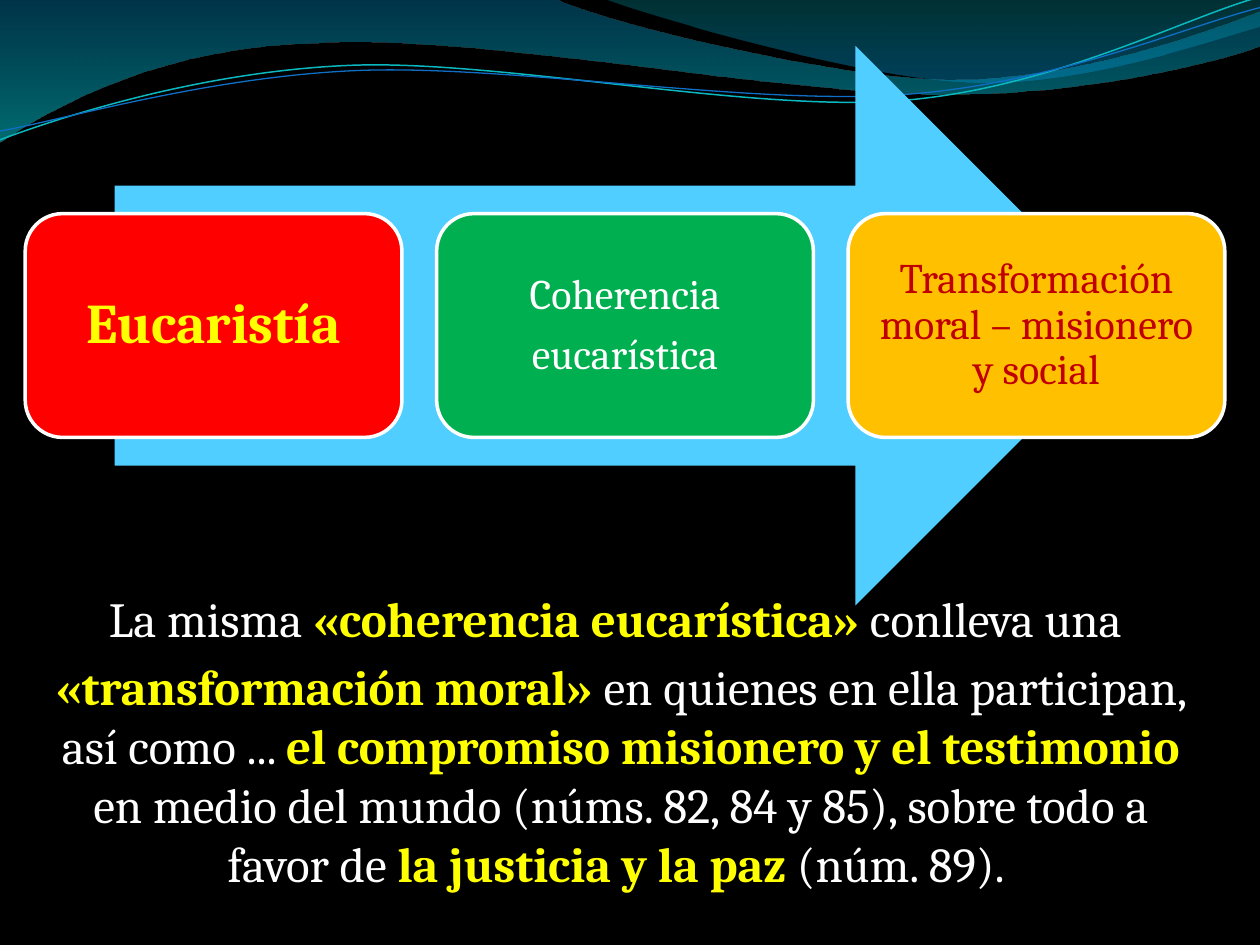
from dataclasses import dataclass
from typing import Optional

from lxml import etree
from pptx import Presentation
from pptx import util as u
from pptx.dml.color import RGBColor
from pptx.enum import shapes, text
from pptx.oxml import ns

FONT = "Cambria"
BLACK = RGBColor(0x00, 0x00, 0x00)
WHITE = RGBColor(0xFF, 0xFF, 0xFF)
YELLOW = RGBColor(0xFF, 0xFF, 0x00)
RED = RGBColor(0xFF, 0x00, 0x00)
GREEN = RGBColor(0x00, 0xB0, 0x50)
AMBER = RGBColor(0xFF, 0xC0, 0x00)
DARK_RED = RGBColor(0xC0, 0x00, 0x00)
SKY = RGBColor(0x4F, 0xCE, 0xFF)
DEEP_BLUE = RGBColor(0x00, 0x74, 0xA1)
TURQUOISE = RGBColor(0x00, 0xC6, 0xCF)
TEAL = RGBColor(0x00, 0xA1, 0xA9)
OCEAN = RGBColor(0x00, 0x8B, 0xBF)
CYAN_LINE = RGBColor(0x0A, 0xB8, 0xBF)
BLUE_LINE = RGBColor(0x0F, 0x6F, 0xC6)


@dataclass
class Stop:
    position: float
    color: RGBColor
    opacity: int


@dataclass
class Wave:
    start: tuple
    segments: list  # two numbers: straight line; six: cubic curve
    stops: tuple = ()
    line: Optional[RGBColor] = None
    weight: float = 0


@dataclass
class Step:
    paragraphs: list
    fill: RGBColor
    color: RGBColor
    size: float = 24
    bold: bool = False
    margin: float = 7.2


WAVES = [
    Wave((0, 0), [
        (316.8, -0.7),
        (342.7, 12.2, 478.1, 45.4, 545.8, 45.4),
        (614.2, 45.4, 689.8, 18.7, 720, 6.5),
        (720.7, 25.9),
        (707.8, 31.7, 626.4, 54.7, 537.1, 54),
        (447.8, 54, 275, 20.2, 185, 24.5),
        (92.9, 25.9, 33.1, 59.8, -0.7, 81.4),
    ], stops=(Stop(0, DEEP_BLUE, 45), Stop(1, TURQUOISE, 55))),
    Wave((344.9, -0.7), [
        (366.5, 7.9, 491, 44.6, 553.7, 46.8),
        (616.3, 49.7, 691.9, 23, 720, 15.1),
        (720, 0),
    ], stops=(Stop(0, TEAL, 30), Stop(0.8, OCEAN, 45))),
    Wave((0, 79.9), [
        (34.6, 67, 113.8, 41, 199.4, 37.4),
        (284.4, 33.8, 427, 64.1, 513.4, 57.6),
        (599.8, 51.1, 675.4, 10.8, 718.6, -1.4),
    ], line=CYAN_LINE, weight=0.85),
    Wave((0, 74.9), [
        (33.8, 69.1, 118.1, 43.9, 203.8, 40.3),
        (290.2, 36.7, 429.8, 60.5, 516.2, 54),
        (601.9, 48.2, 677.5, 15.1, 720, 4.3),
    ], line=BLUE_LINE, weight=0.75),
]

STEPS = [
    Step(["Eucaristía"], RED, YELLOW, size=32, bold=True, margin=9.4),
    Step(["Coherencia", "eucarística"], GREEN, WHITE),
    Step(["Transformación moral – misionero y social"], AMBER, DARK_RED),
]

# Each run is its text and whether it is highlighted
MESSAGE = [
    [("La misma ", False), ("«coherencia eucarística» ", True), ("conlleva una ", False)],
    [("«transformación moral» ", True),
     ("en quienes en ella participan, así como ... ", False),
     ("el compromiso misionero y el testimonio ", True),
     ("en medio del mundo (núms. 82, 84 y 85), sobre todo a favor de ", False),
     ("la justicia y la paz ", True), ("(núm. 89). ", False)],
]


def add_run(paragraph, content: str, *, size: float, color: RGBColor, bold: bool = False):
    run = paragraph.add_run()
    run.text = content
    run.font.name = FONT
    run.font.size = u.Pt(size)
    run.font.bold = bold
    run.font.color.rgb = color


def next_paragraph(frame, index: int):
    paragraph = frame.add_paragraph() if index else frame.paragraphs[0]
    paragraph.alignment = text.PP_ALIGN.CENTER
    return paragraph


def set_frame(frame, margins: tuple, anchor) -> None:
    frame.word_wrap = True
    frame.auto_size = text.MSO_AUTO_SIZE.NONE
    frame.vertical_anchor = anchor
    frame.margin_left, frame.margin_top, frame.margin_right, frame.margin_bottom = map(u.Pt, margins)


def bend_segments(shape, segments: list) -> None:
    """Join the three lines of each six-number segment into one cubic curve."""
    lines = iter(list(shape.element.iter(ns.qn("a:lnTo"))))
    for segment in segments:
        line = next(lines)
        if len(segment) == 2:
            continue
        curve = etree.Element(ns.qn("a:cubicBezTo"))
        line.addprevious(curve)
        for control in (line, next(lines), next(lines)):
            curve.append(control[0])
            control.getparent().remove(control)


def draw_wave(slide, wave: Wave) -> None:
    points = [(u.Pt(segment[i]), u.Pt(segment[i + 1]))
              for segment in wave.segments for i in range(0, len(segment), 2)]
    builder = slide.shapes.build_freeform(*map(u.Pt, wave.start))
    builder.add_line_segments(points, close=bool(wave.stops))
    shape = builder.convert_to_shape()
    bend_segments(shape, wave.segments)
    shape.shadow.inherit = False
    if not wave.stops:
        shape.fill.background()
        shape.line.color.rgb = wave.line
        shape.line.width = u.Pt(wave.weight)
        return
    shape.line.fill.background()
    shape.fill.gradient()
    shape.fill.gradient_angle = 270
    for target, stop in zip(shape.fill.gradient_stops, wave.stops):
        target.position = stop.position
        target.color.rgb = stop.color
    colors = shape.element.spPr.iter(ns.qn("a:srgbClr"))
    for color, stop in zip(list(colors), wave.stops):
        etree.SubElement(color, ns.qn("a:alpha")).set("val", str(stop.opacity * 1000))


def add_block(slide, kind, bounds: tuple, fill: RGBColor):
    shape = slide.shapes.add_shape(kind, *map(u.Pt, bounds))
    shape.shadow.inherit = False
    shape.fill.solid()
    shape.fill.fore_color.rgb = fill
    shape.line.fill.background()
    return shape


def draw_step(slide, step: Step, left: float) -> None:
    shape = add_block(slide, shapes.MSO_SHAPE.ROUNDED_RECTANGLE,
                      (left, 122.1, 215.3, 127.9), step.fill)
    shape.line.color.rgb = WHITE
    shape.line.width = u.Pt(2)
    set_frame(shape.text_frame, (step.margin,) * 4, text.MSO_ANCHOR.MIDDLE)
    for index, content in enumerate(step.paragraphs):
        paragraph = next_paragraph(shape.text_frame, index)
        paragraph.line_spacing = 0.9
        paragraph.space_after = u.Pt(step.size * 0.35)
        add_run(paragraph, content, size=step.size, color=step.color, bold=step.bold)


def fill_message(placeholder) -> None:
    placeholder.left, placeholder.top = u.Pt(31), u.Pt(332.6)
    placeholder.width, placeholder.height = u.Pt(652.3), u.Pt(175.7)
    set_frame(placeholder.text_frame, (0, 3.6, 1.4, 3.6), text.MSO_ANCHOR.TOP)
    for index, runs in enumerate(MESSAGE):
        paragraph = next_paragraph(placeholder.text_frame, index)
        paragraph.space_before = u.Pt(5.6 if index else 0)
        # Right indent of the paragraph
        paragraph._p.get_or_add_pPr().set("marR", str(u.Pt(3.6)))
        for content, highlighted in runs:
            add_run(paragraph, content, size=28, bold=highlighted,
                    color=YELLOW if highlighted else WHITE)


def main() -> None:
    presentation = Presentation()
    presentation.slide_width, presentation.slide_height = u.Pt(720), u.Pt(540)
    slide = presentation.slides.add_slide(presentation.slide_layouts[0])
    slide.background.fill.solid()
    slide.background.fill.fore_color.rgb = BLACK

    # The slide has a subtitle only
    title = slide.shapes.title
    title.element.getparent().remove(title.element)

    # Waves along the top
    for wave in WAVES:
        draw_wave(slide, wave)

    # Message, in front of the waves
    message = slide.placeholders[1]
    fill_message(message)
    message.element.getparent().append(message.element)

    # Process arrow and its steps
    add_block(slide, shapes.MSO_SHAPE.RIGHT_ARROW, (65.5, 26.2, 583.2, 319.8), SKY)
    for index, step in enumerate(STEPS):
        draw_step(slide, step, 14.4 + index * 235.1)

    presentation.save("out.pptx")


if __name__ == "__main__":
    main()
